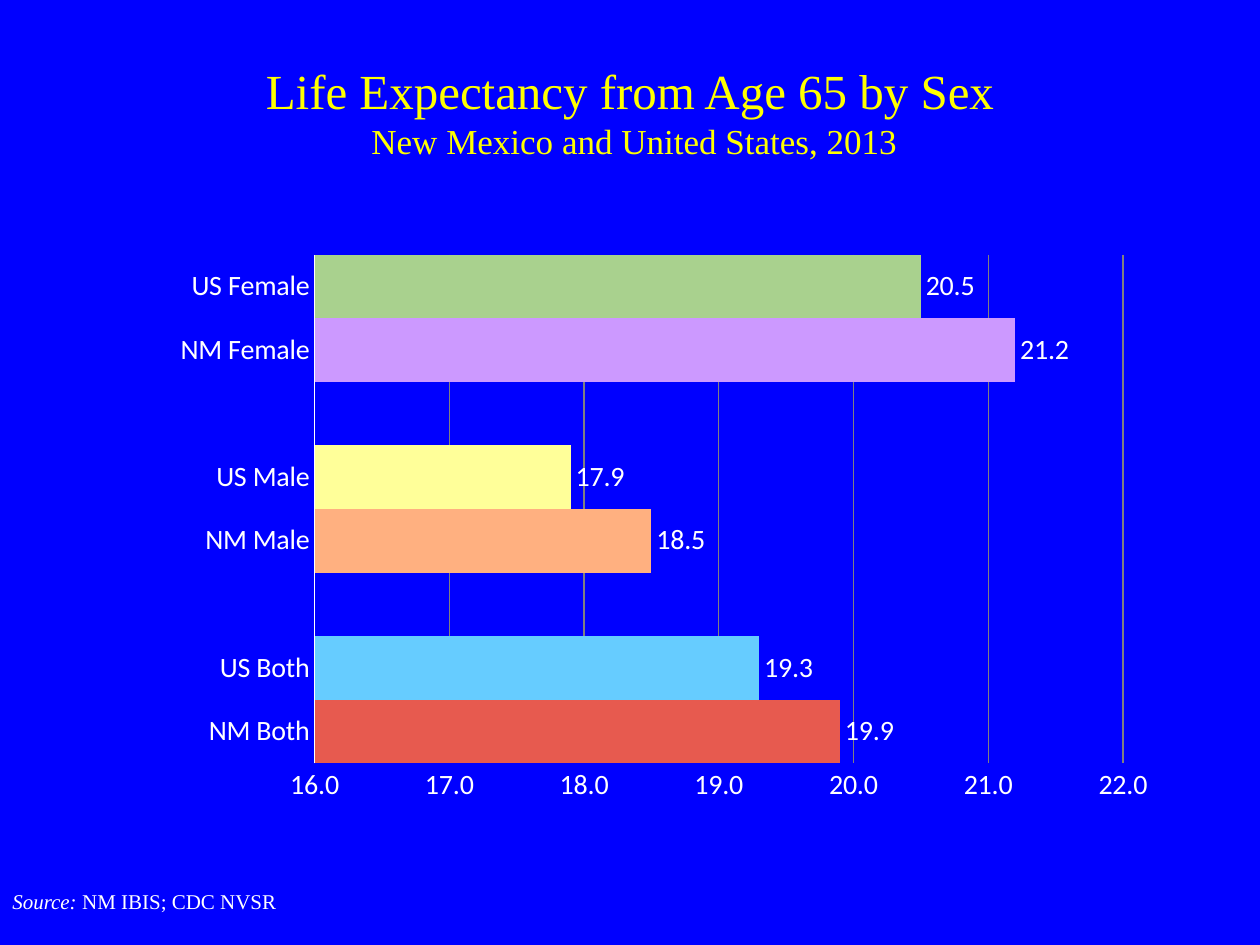
from typing import NamedTuple

import lxml.etree
import pptx
import pptx.chart.data
import pptx.dml.color
import pptx.enum.chart
import pptx.enum.text
import pptx.oxml
import pptx.oxml.ns
import pptx.util
from pptx.util import Cm

COLORS = {
    "background": "0000FF",
    "title": "FFFF00",
    "text": "FFFFFF",
    "grid": "808080",
    "nm_both": "E75A4F",
    "us_both": "66CCFF",
    "nm_male": "FFB080",
    "us_male": "FFFF99",
    "nm_female": "CC99FF",
    "us_female": "A9D18E",
}
SERIF = "Times New Roman"
SANS = "Calibri"


class Bar(NamedTuple):
    label: str
    value: float | None = None
    color: str = ""


class Run(NamedTuple):
    text: str
    size: int
    color: str
    italic: bool = False


class Box(NamedTuple):
    left: float
    top: float
    width: float
    height: float

    def lengths(self) -> list[int]:
        return [Cm(n) for n in self]


GAP = Bar("")
BARS = [
    Bar("NM Both", 19.9, "nm_both"),
    Bar("US Both", 19.3, "us_both"),
    GAP,
    Bar("NM Male", 18.5, "nm_male"),
    Bar("US Male", 17.9, "us_male"),
    GAP,
    Bar("NM Female", 21.2, "nm_female"),
    Bar("US Female", 20.5, "us_female"),
]
PLOT = {"x": 0.22, "y": 0.04, "w": 0.74, "h": 0.85}


def rgb(name: str) -> pptx.dml.color.RGBColor:
    return pptx.dml.color.RGBColor.from_string(COLORS[name])


def set_font(font, name: str, size: int, color: str) -> None:
    font.name = name
    font.size = pptx.util.Pt(size)
    font.color.rgb = rgb(color)


def set_line(line, color: str) -> None:
    line.color.rgb = rgb(color)
    line.width = pptx.util.Pt(0.75)


def add_text(s, box: Box, lines: list[list[Run]], align, anchor) -> None:
    tf = s.shapes.add_textbox(*box.lengths()).text_frame
    tf.word_wrap = True
    tf.vertical_anchor = anchor
    p = tf.paragraphs[0]
    p.alignment = align
    for i, line in enumerate(lines):
        if i:
            p.add_line_break()
        for run in line:
            r = p.add_run()
            r.text = run.text
            set_font(r.font, SERIF, run.size, run.color)
            r.font.italic = run.italic


def place_plot(chart) -> None:
    qn = pptx.oxml.ns.qn
    area = chart.element.find(".//" + qn("c:plotArea"))
    for old in area.findall(qn("c:layout")):
        area.remove(old)
    layout = pptx.oxml.parse_xml(f"<c:layout {pptx.oxml.ns.nsdecls('c')}/>")
    manual = lxml.etree.SubElement(layout, qn("c:manualLayout"))
    settings = {"layoutTarget": "inner", "xMode": "edge", "yMode": "edge", **PLOT}
    for tag, value in settings.items():
        lxml.etree.SubElement(manual, qn(f"c:{tag}")).set("val", str(value))
    area.insert(0, layout)


def add_bar_chart(s, box: Box, bars: list[Bar]) -> None:
    enums = pptx.enum.chart
    data = pptx.chart.data.CategoryChartData(number_format="0.0")
    data.categories = [bar.label for bar in bars]
    data.add_series("Series 1", [bar.value for bar in bars])
    chart = s.shapes.add_chart(
        enums.XL_CHART_TYPE.BAR_CLUSTERED, *box.lengths(), data
    ).chart
    chart.has_legend = False
    chart.has_title = False
    set_font(chart.font, SERIF, 10, "text")
    place_plot(chart)

    for axis in (chart.category_axis, chart.value_axis):
        axis.major_tick_mark = enums.XL_TICK_MARK.NONE
        axis.minor_tick_mark = enums.XL_TICK_MARK.NONE
        set_font(axis.tick_labels.font, SANS, 16, "text")
    chart.category_axis.has_major_gridlines = False
    set_line(chart.category_axis.format.line, "text")

    axis = chart.value_axis
    axis.minimum_scale, axis.maximum_scale, axis.major_unit = 16, 22, 1
    axis.tick_labels.number_format = "0.0"
    axis.tick_labels.number_format_is_linked = False
    axis.format.line.fill.background()
    axis.has_major_gridlines = True
    set_line(axis.major_gridlines.format.line, "grid")

    plot = chart.plots[0]
    plot.vary_by_categories = False
    plot.gap_width = 0
    plot.overlap = 51
    plot.has_data_labels = True
    labels = plot.data_labels
    labels.show_value = True
    labels.position = enums.XL_LABEL_POSITION.OUTSIDE_END
    labels.number_format = "0.0"
    labels.number_format_is_linked = False
    set_font(labels.font, SANS, 16, "text")

    series = plot.series[0]
    series.invert_if_negative = False
    for i, bar in enumerate(bars):
        if bar.color:
            fill = series.points[i].format.fill
            fill.solid()
            fill.fore_color.rgb = rgb(bar.color)


def main() -> None:
    prs = pptx.Presentation()
    prs.slide_width, prs.slide_height = Cm(25.4), Cm(19.05)
    s = prs.slides.add_slide(prs.slide_layouts[6])
    s.background.fill.solid()
    s.background.fill.fore_color.rgb = rgb("background")

    add_bar_chart(s, Box(1.5, 4.65, 22.02, 12.07), BARS)
    align, anchor = pptx.enum.text.PP_ALIGN, pptx.enum.text.MSO_ANCHOR
    title = [
        [Run("Life Expectancy from Age 65 by Sex", 28, "title")],
        [Run(" New Mexico and United States, 2013", 20, "title")],
    ]
    add_text(s, Box(1.9, 0.64, 21.6, 3.18), title, align.CENTER, anchor.MIDDLE)
    source = [[Run("Source: ", 12, "text", True), Run("NM IBIS; CDC NVSR", 12, "text")]]
    add_text(s, Box(0, 17.78, 17.35, 0.76), source, align.LEFT, anchor.TOP)
    prs.save("out.pptx")


if __name__ == "__main__":
    main()
